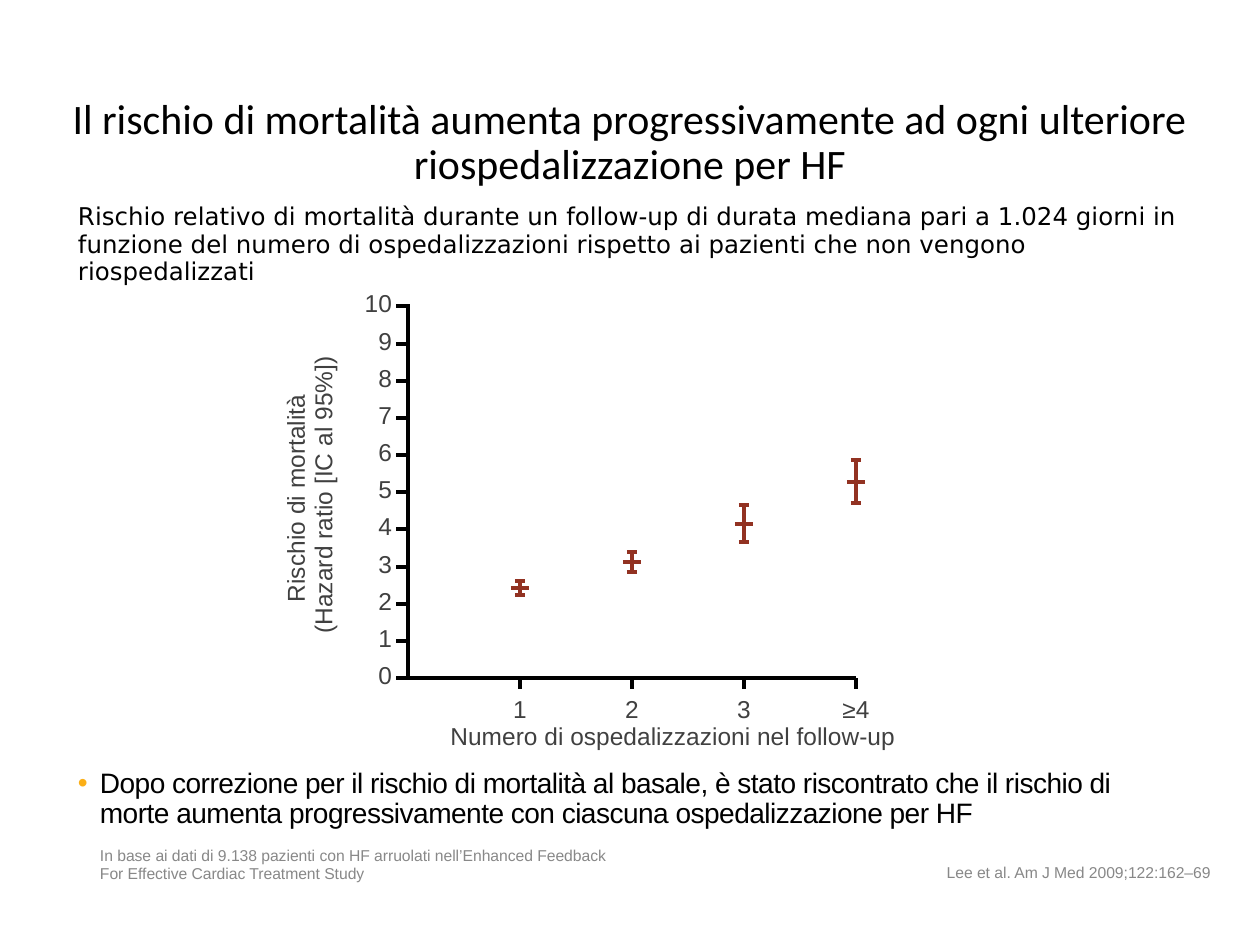
from lxml import etree
from pptx import Presentation, util as u
from pptx.dml.color import RGBColor
from pptx.enum import shapes as sh, text as t
from pptx.oxml import ns

PX = 8000
BLACK, WHITE, GREY, PALE = "000000", "FFFFFF", "404040", "888888"
RED, GOLD = "923222", "FBAF17"
LEFT, BASE, STEP = 408, 678, 37.15
FIRST, GAP = 520, 112
RISKS = [("1", 581, 588, 595), ("2", 552, 562, 572),
         ("3", 505, 524, 542), ("≥4", 460, 482, 503)]


def px(*vals):
    """Turn lengths in px into EMU."""
    return [u.Emu(v * PX) for v in vals]


def rgb(code):
    """Give the colour for a hex string."""
    return RGBColor.from_string(code)


def dot(par, code, dent):
    """Give a paragraph a coloured bullet with a hanging indent."""
    props = par._p.get_or_add_pPr()
    props.set("marL", str(dent * PX))
    props.set("indent", str(-dent * PX))
    tint = etree.SubElement(props, ns.qn("a:buClr"))
    etree.SubElement(tint, ns.qn("a:srgbClr")).set("val", code)
    etree.SubElement(props, ns.qn("a:buFont")).set("typeface", "Arial")
    etree.SubElement(props, ns.qn("a:buChar")).set("char", "•")


def write(shape, words, size=15.44, font="Arial", color=GREY, align="LEFT",
          lead=0.93, anchor="TOP", wrap=True, bullet=None, track=None):
    """Fill a shape with formatted text, one paragraph per line."""
    frame = shape.text_frame
    frame.word_wrap = wrap
    frame.auto_size = t.MSO_AUTO_SIZE.SHAPE_TO_FIT_TEXT
    frame.vertical_anchor = t.MSO_ANCHOR[anchor]
    frame.margin_left, frame.margin_right = px(6, 6)
    frame.margin_top, frame.margin_bottom = px(6, 6)
    frame.text = words
    for par in frame.paragraphs:
        par.alignment = t.PP_ALIGN[align]
        par.line_spacing = lead
        if bullet:
            dot(par, bullet, 22)
        for run in par.runs:
            run.font.size = u.Pt(size)
            run.font.name = font
            run.font.color.rgb = rgb(color)
            if track:
                run._r.get_or_add_rPr().set("spc", str(track))


def label(slide, place, words, turn=0, **form):
    """Add a text box."""
    box = slide.shapes.add_textbox(*px(*place))
    box.rotation = turn
    write(box, words, **form)


def rule(slide, x1, y1, x2, y2, color=BLACK):
    """Draw a straight line."""
    line = slide.shapes.add_connector(sh.MSO_CONNECTOR.STRAIGHT,
                                      *px(x1, y1, x2, y2))
    line.line.color.rgb = rgb(color)
    line.line.width = u.Pt(2.25)
    etree.SubElement(line._element.spPr, ns.qn("a:effectLst"))


def head(slide):
    """Set the title and the white panel under it."""
    title = slide.shapes.title
    title.left, title.top, title.width, title.height = px(0, 92, 1260, 103)
    write(title, "Il rischio di mortalità aumenta progressivamente ad ogni "
          "ulteriore riospedalizzazione per HF", size=26.46, font="Calibri",
          color=BLACK, align="CENTER", lead=0.9)
    panel = slide.shapes.add_shape(sh.MSO_SHAPE.RECTANGLE,
                                   *px(72, 198, 1140, 66))
    panel.shadow.inherit = False
    panel.fill.solid()
    panel.fill.fore_color.rgb = rgb(WHITE)
    panel.line.color.rgb = rgb(WHITE)
    panel.line.width = u.Pt(1)
    write(panel, "Rischio relativo di mortalità durante un follow-up di durata "
          "mediana pari a 1.024 giorni in funzione del numero di "
          "ospedalizzazioni rispetto ai pazienti che non vengono "
          "riospedalizzati", font="DejaVu Sans", color=BLACK)


def axes(slide):
    """Draw both axes with the risk scale and the axis names."""
    path = slide.shapes.build_freeform(LEFT, 304, scale=PX)
    path.add_line_segments([(LEFT, BASE), (856, BASE)], close=False)
    frame = path.convert_to_shape()
    frame.shadow.inherit = False
    frame.fill.background()
    frame.line.color.rgb = rgb(BLACK)
    frame.line.width = u.Pt(2.25)
    for risk in range(11):
        y = round(BASE - STEP * risk)
        rule(slide, LEFT - 12, y, LEFT, y)
        wide = 42 if risk > 9 else 26
        label(slide, (398 - wide, y - 21, wide, 39), str(risk),
              align="RIGHT", wrap=False)
    label(slide, (119, 462, 382, 66),
          "Rischio di mortalità \n(Hazard ratio [IC al 95%])",
          turn=270, align="CENTER")
    label(slide, (397, 718, 552, 39),
          "Numero di ospedalizzazioni nel follow-up", align="CENTER")


def marks(slide):
    """Draw each hazard ratio with its interval, tick and label."""
    for i, (name, top, mid, low) in enumerate(RISKS):
        x = FIRST + GAP * i
        rule(slide, x, BASE + 11, x, BASE)
        label(slide, (x - 44, 691, 88, 39), name, align="CENTER")
        rule(slide, x, low, x, top, RED)
        for y, half in ((top, 5), (mid, 9), (low, 5)):
            rule(slide, x - half, y, x + half, y, RED)


def notes(slide):
    """Add the finding and the two source lines."""
    label(slide, (72, 763, 1098, 73),
          "Dopo correzione per il rischio di mortalità al basale, è stato "
          "riscontrato che il rischio di morte aumenta progressivamente con "
          "ciascuna ospedalizzazione per HF", size=17.64, color=BLACK,
          lead=0.9, bullet=GOLD, track=-30)
    label(slide, (94, 842, 525, 47),
          "In base ai dati di 9.138 pazienti con HF arruolati nell’Enhanced "
          "Feedback For Effective Cardiac Treatment Study",
          size=9.92, color=PALE)
    label(slide, (591, 858, 630, 30), "Lee et al. Am J Med 2009;122:162–69 ",
          size=9.92, color=PALE, align="RIGHT", anchor="MIDDLE")


def main():
    """Build the slide and save it."""
    deck = Presentation()
    deck.slide_width, deck.slide_height = px(1260, 945)
    slide = deck.slides.add_slide(deck.slide_layouts[5])
    head(slide)
    axes(slide)
    marks(slide)
    notes(slide)
    deck.save("out.pptx")


if __name__ == "__main__":
    main()
